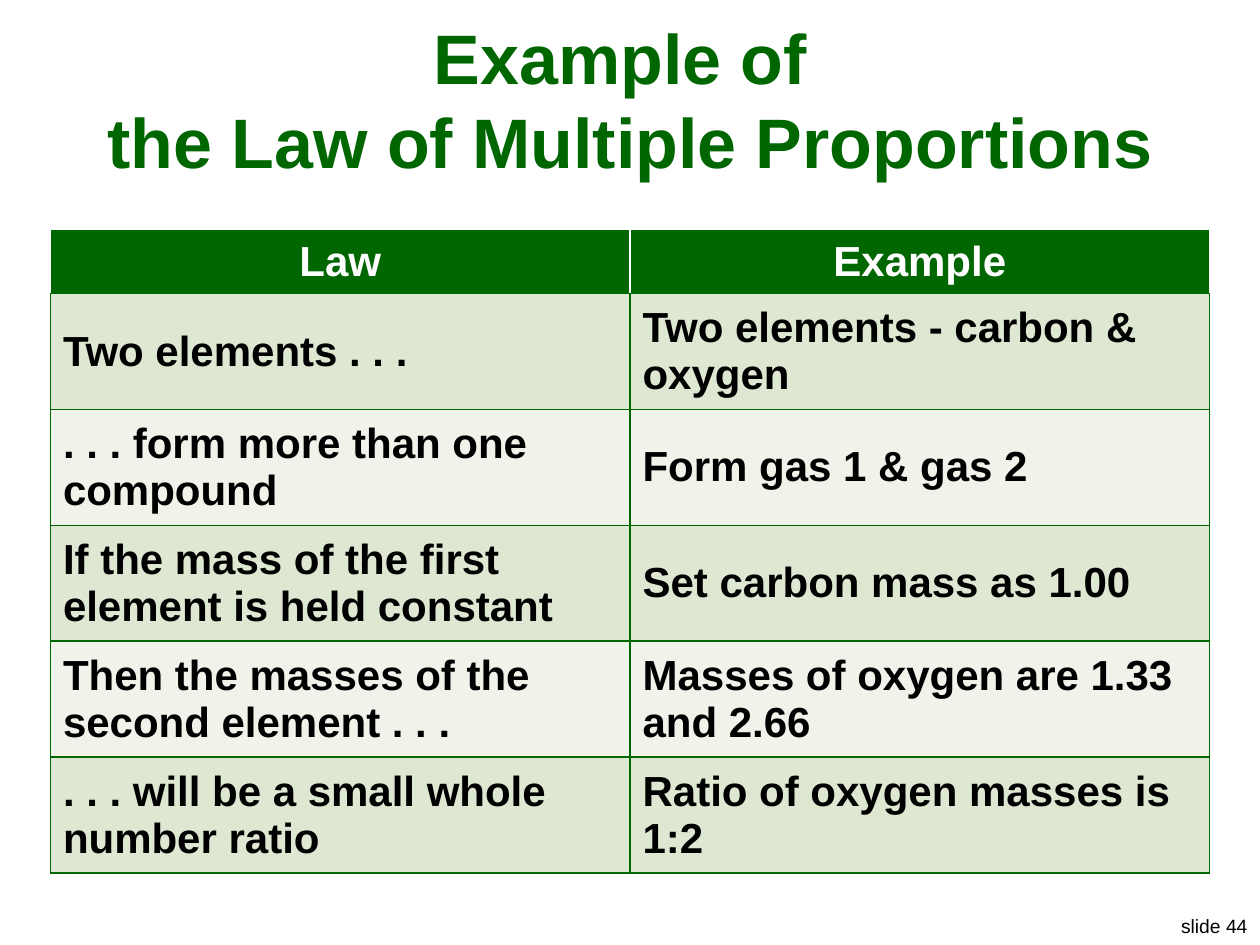
"""Build a slide that sets the law of multiple proportions beside an example."""
from dataclasses import dataclass

from lxml.etree import SubElement
from pptx import Presentation
from pptx.dml.color import RGBColor
from pptx.enum.text import MSO_ANCHOR, MSO_AUTO_SIZE, PP_ALIGN
from pptx.oxml.ns import qn
from pptx.util import Inches, Pt

GREEN, WHITE, BLACK = "006600", "FFFFFF", "000000"
BANDS = ("DEE7D1", "EFF3EA")


@dataclass
class Pair:
    law: str
    case: str


PAIRS = [
    Pair("Two elements . . .", "Two elements - carbon & oxygen"),
    Pair(". . . form more than one compound", "Form gas 1 & gas 2"),
    Pair("If the mass of the first element is held constant",
         "Set carbon mass as 1.00"),
    Pair("Then the masses of the second element . . .",
         "Masses of oxygen are 1.33 and 2.66"),
    Pair(". . . will be a small whole number ratio",
         "Ratio of oxygen masses is 1:2"),
]


def paint(target, color: str) -> None:
    target.rgb = RGBColor.from_string(color)


def write(frame, text: str, *, size: int, color: str = BLACK,
          bold: bool = True, align=PP_ALIGN.LEFT, break_size: int = 0) -> None:
    para = frame.paragraphs[0]
    para.text = text
    para.alignment = align
    for run in para.runs:
        run.font.name = "Arial"
        run.font.size = Pt(size)
        run.font.bold = bold
        paint(run.font.color, color)
    for gap in para._p.findall(qn("a:br")):
        SubElement(gap, qn("a:rPr"), sz=str((break_size or size) * 100))


def edge(cell, side: str, color: str) -> None:
    line = SubElement(cell._tc.get_or_add_tcPr(), qn(f"a:ln{side}"),
                      w=str(Pt(1)))
    fill = SubElement(line, qn("a:solidFill"))
    SubElement(fill, qn("a:srgbClr"), val=color)


def draw_cell(cell, text: str, *, fill: str, head: bool) -> None:
    for side in "LRTB":
        edge(cell, side, WHITE if head and side != "B" else GREEN)
    cell.fill.solid()
    paint(cell.fill.fore_color, fill)
    cell.vertical_anchor = MSO_ANCHOR.MIDDLE
    write(cell.text_frame, text, size=24, color=WHITE if head else BLACK,
          align=PP_ALIGN.CENTER if head else PP_ALIGN.LEFT)


def draw_table(slide, pairs: list[Pair]) -> None:
    rows = [Pair("Law", "Example"), *pairs]
    table = slide.shapes.add_table(len(rows), 2, Inches(0.4), Inches(1.82),
                                   Inches(9.2), Inches(5.1)).table
    for index, pair in enumerate(rows):
        head = index == 0
        table.rows[index].height = Inches(0.51 if head else 0.92)
        fill = GREEN if head else BANDS[(index - 1) % 2]
        for col, text in enumerate((pair.law, pair.case)):
            draw_cell(table.cell(index, col), text, fill=fill, head=head)


def draw_title(slide) -> None:
    title = slide.shapes.title
    title.left, title.top = Inches(0.2), Inches(0.3)
    title.width, title.height = Inches(9.6), Inches(0.97)
    frame = title.text_frame
    frame.auto_size = MSO_AUTO_SIZE.NONE
    frame.vertical_anchor = MSO_ANCHOR.MIDDLE
    write(frame, "Example of \vthe Law of Multiple Proportions", size=40,
          color=GREEN, align=PP_ALIGN.CENTER, break_size=48)


def draw_number(slide) -> None:
    box = slide.shapes.add_textbox(Inches(9.25), Inches(7.21),
                                   Inches(0.75), Inches(0.29))
    box.text_frame.word_wrap = False
    box.text_frame.auto_size = MSO_AUTO_SIZE.SHAPE_TO_FIT_TEXT
    write(box.text_frame, "slide 44", size=11, bold=False,
          align=PP_ALIGN.RIGHT)


def main() -> None:
    deck = Presentation()
    deck.slide_width, deck.slide_height = Inches(10), Inches(7.5)
    slide = deck.slides.add_slide(deck.slide_layouts[5])
    draw_number(slide)
    draw_title(slide)
    draw_table(slide, PAIRS)
    deck.save("out.pptx")


if __name__ == "__main__":
    main()
